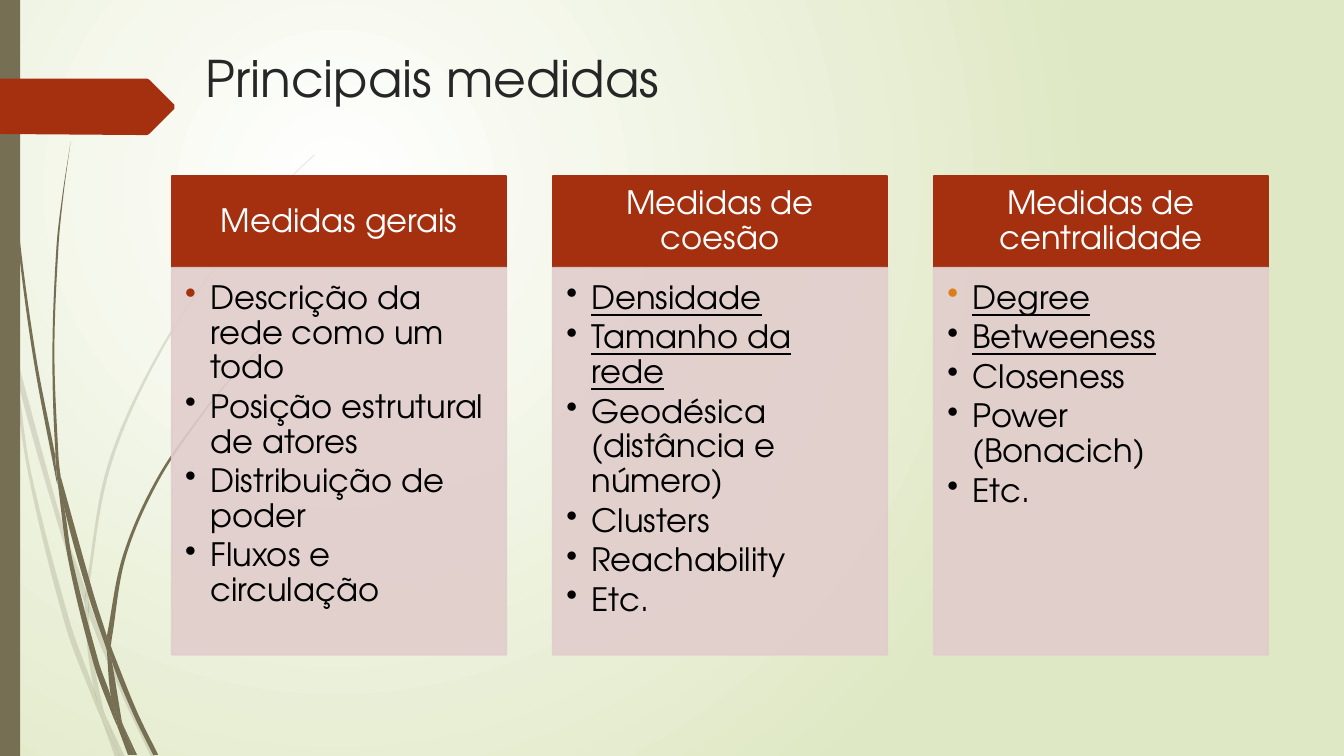
from lxml import etree
from pptx import Presentation
from pptx.dml.color import RGBColor
from pptx.enum.shapes import MSO_SHAPE
from pptx.enum.text import MSO_ANCHOR, PP_ALIGN
from pptx.oxml.ns import qn
from pptx.util import Pt

RECTANGLE = MSO_SHAPE.RECTANGLE
TOP, MIDDLE = MSO_ANCHOR.TOP, MSO_ANCHOR.MIDDLE
LEFT, CENTER = PP_ALIGN.LEFT, PP_ALIGN.CENTER

FONT = "TeX Gyre Adventor"
COLORS = {
    "white": "FFFFFF", "green": "DFE8C4", "olive": "766F54", "red": "A53010",
    "rose": "E1CDCC", "title": "262626", "black": "000000", "orange": "DE7E18",
}
GRID = 0.72
SMOOTH_COSINE = 0.85

FAINT_GRASS = [
    [(11, 350), (9, 322), (0, 282), (0, 299), (10, 344)],
    [(58, 522), (84, 599), (85, 586), (62, 520), (14, 345), (17, 376)],
    [(92, 607), (88, 596), (88, 610), (123, 694), (150, 751), (155, 751), (127, 692)],
    [(119, 751), (124, 751), (105, 711)],
    [(93, 683), (70, 619), (31, 469), (17, 376), (11, 350), (28, 470), (65, 621),
     (92, 693), (101, 714), (99, 707)],
    [(84, 599), (87, 646), (93, 683), (96, 692), (105, 711), (103, 706), (91, 646),
     (88, 610), (88, 608)],
    [(88, 584), (110, 462), (160, 349), (229, 245), (268, 198), (290, 175), (312, 154),
     (312, 153), (289, 175), (268, 197), (228, 244), (158, 348), (107, 461), (85, 584),
     (85, 586), (88, 596)],
    [(101, 714), (114, 751), (119, 751)],
    [(88, 608), (88, 610), (88, 596), (85, 586), (84, 599)],
    [(96, 692), (93, 683), (99, 707), (101, 714), (119, 751), (105, 711)],
]
DARK_GRASS = [
    [(7, 110), (17, 233), (33, 355), (56, 477), (57, 481), (55, 457), (55, 453), (36, 355),
     (19, 232), (8, 109), (5, 48), (4, 0), (3, 0), (4, 48)],
    [(88, 592), (106, 645), (106, 633), (106, 631), (93, 590), (60, 472), (64, 505)],
    [(113, 649), (110, 641), (111, 656), (132, 708), (152, 749), (157, 749), (136, 706)],
    [(110, 691), (98, 657), (72, 556), (64, 505), (57, 477), (68, 557), (93, 659),
     (111, 708), (117, 722), (116, 717)],
    [(60, 472), (58, 453), (54, 349), (58, 245), (63, 193), (70, 141), (62, 193),
     (56, 245), (52, 349), (55, 449)],
    [(133, 749), (136, 749), (122, 719)],
    [(57, 477), (64, 505), (60, 472), (55, 449), (55, 453)],
    [(111, 633), (125, 552), (158, 476), (205, 406), (231, 374), (245, 359), (261, 344),
     (260, 344), (245, 358), (231, 373), (204, 405), (156, 474), (122, 551), (106, 631),
     (110, 641)],
    [(117, 722), (127, 749), (131, 749)],
    [(106, 645), (110, 691), (116, 706), (122, 719), (121, 716), (111, 656), (109, 651)],
    [(106, 645), (109, 651), (111, 656), (110, 641), (106, 631), (106, 633)],
    [(116, 706), (110, 691), (116, 717), (117, 722), (130, 749), (133, 749), (122, 719)],
]
ARROW = [(0, 78), (146, 78), (148, 79), (173, 104), (173, 108), (148, 133), (146, 134),
         (136, 134), (0, 133)]

COLUMNS = [
    ("Medidas gerais", "red", 0,
     ["Descrição da rede como um todo", "Posição estrutural de atores",
      "Distribuição de poder", "Fluxos e circulação"]),
    ("Medidas de coesão", "black", 2,
     ["Densidade", "Tamanho da rede", "Geodésica (distância e número)",
      "Clusters", "Reachability", "Etc."]),
    ("Medidas de centralidade", "orange", 2,
     ["Degree", "Betweeness", "Closeness", "Power (Bonacich)", "Etc."]),
]
COLUMN_LEFT, COLUMN_STEP, COLUMN_WIDTH = 122.7, 272.16, 239
HEADER = {"top": 125.5, "height": 65.7}
BODY = {"top": 191.3, "height": 276.5}


def rgb(name):
    return RGBColor.from_string(COLORS[name])


def set_format(target, values):
    for name, value in values.items():
        setattr(target, name, value)


def paint_background(page):
    fill = page.background.fill
    fill.gradient()
    for stop, name in zip(fill.gradient_stops, ("white", "green")):
        stop.color.rgb = rgb(name)
    gradient = page.element.find(".//" + qn("a:gradFill"))
    circle = etree.Element(qn("a:path"), path="circle")
    etree.SubElement(circle, qn("a:fillToRect"), l="50000", t="50000", r="100000", b="100000")
    gradient.replace(gradient.find(qn("a:lin")), circle)


def paint(shape, color, opacity=100, line_width=0):
    shape.shadow.inherit = False
    shape.fill.solid()
    shape.fill.fore_color.rgb = rgb(color)
    if line_width:
        shape.line.color.rgb = rgb(color)
        shape.line.width = Pt(line_width)
    else:
        shape.line.fill.background()
    if opacity < 100:
        for tint in shape.element.spPr.iter(qn("a:srgbClr")):
            etree.SubElement(tint, qn("a:alpha"), val=str(opacity * 1000))


def add_outline(page, points, color, opacity=100):
    corners = [(Pt(x * GRID), Pt(y * GRID)) for x, y in points]
    builder = page.shapes.build_freeform(*corners[0], scale=1.0)
    builder.add_line_segments(corners[1:], close=True)
    shape = builder.convert_to_shape()
    paint(shape, color, opacity)
    return shape


def tangent(before, point, after, chord):
    arriving, leaving = point - before, after - point
    cosine = (arriving * leaving.conjugate()).real / abs(arriving * leaving)
    if cosine < SMOOTH_COSINE:
        return chord / 3
    direction = after - before
    return direction / abs(direction) * abs(chord) / 3


def curve_points(anchors):
    spots = [complex(x, y) for x, y in anchors]
    count = len(spots)
    curve = [spots[0]]
    for index in range(count):
        before, start, end, after = (spots[(index + shift) % count] for shift in (-1, 0, 1, 2))
        chord = end - start
        curve += [start + tangent(before, start, end, chord),
                  end - tangent(start, end, after, chord), end]
    return [(spot.real, spot.imag) for spot in curve]


def add_blade(page, anchors, opacity):
    shape = add_outline(page, curve_points(anchors), "olive", opacity)
    lines = list(shape.element.iter(qn("a:lnTo")))
    for first in range(0, len(lines), 3):
        curve = etree.Element(qn("a:cubicBezTo"))
        lines[first].addprevious(curve)
        for line in lines[first:first + 3]:
            curve.append(line[0])
            line.getparent().remove(line)


def add_rectangle(page, left, top, width, height, color, opacity=100, line_width=0):
    box = page.shapes.add_shape(RECTANGLE, Pt(left), Pt(top), Pt(width), Pt(height))
    paint(box, color, opacity, line_width)
    return box


def set_frame(box, anchor, insets):
    frame = box.text_frame
    set_format(frame, {"word_wrap": True, "vertical_anchor": anchor})
    sides = ("margin_left", "margin_top", "margin_right", "margin_bottom")
    set_format(frame, dict(zip(sides, map(Pt, insets))))
    return frame


def write(para, text, size, color, align=LEFT, spacing=1.0, after=0, underline=False):
    set_format(para, {"alignment": align, "line_spacing": spacing, "space_after": Pt(after)})
    span = para.add_run()
    span.text = text
    set_format(span.font, {"name": FONT, "size": Pt(size), "underline": underline})
    span.font.color.rgb = rgb(color)


def add_bullet(para, color):
    props = para._p.get_or_add_pPr()
    props.set("marL", str(Pt(18)))
    props.set("indent", str(Pt(-18)))
    tint = etree.SubElement(props, qn("a:buClr"))
    etree.SubElement(tint, qn("a:srgbClr"), val=COLORS[color])
    etree.SubElement(props, qn("a:buChar"), char="•")


def add_title(page, text):
    box = page.shapes.add_textbox(Pt(139.7), Pt(30.2), Pt(702), Pt(52.6))
    frame = set_frame(box, TOP, (7.2, 3.6, 7.2, 3.6))
    write(frame.paragraphs[0], text, 36, "title")


def add_column(page, left, heading, first_bullet, underlined, items):
    header = add_rectangle(page, left, width=COLUMN_WIDTH, color="red", line_width=1.25, **HEADER)
    frame = set_frame(header, MIDDLE, (13, 7.2, 13, 7.2))
    write(frame.paragraphs[0], heading, 23, "white", CENTER, 0.9)
    body = add_rectangle(page, left, width=COLUMN_WIDTH, color="rose", opacity=90,
                         line_width=1.25, **BODY)
    frame = set_frame(body, TOP, (9.6, 9.8, 14.2, 14.4))
    for index, item in enumerate(items):
        para = frame.add_paragraph() if index else frame.paragraphs[0]
        write(para, item, 23, "black", LEFT, 0.9, 3.4, index < underlined)
        add_bullet(para, "black" if index else first_bullet)


def main():
    deck = Presentation()
    set_format(deck, {"slide_width": Pt(960), "slide_height": Pt(540)})
    page = deck.slides.add_slide(deck.slide_layouts[6])
    paint_background(page)
    for grass, opacity in ((FAINT_GRASS, 20), (DARK_GRASS, 100)):
        for blade in grass:
            add_blade(page, blade, opacity)
    add_rectangle(page, 0, 0, 14.4, 540, "olive")
    add_outline(page, ARROW, "red")
    add_title(page, "Principais medidas")
    for index, column in enumerate(COLUMNS):
        add_column(page, COLUMN_LEFT + index * COLUMN_STEP, *column)
    deck.save("out.pptx")


if __name__ == "__main__":
    main()
